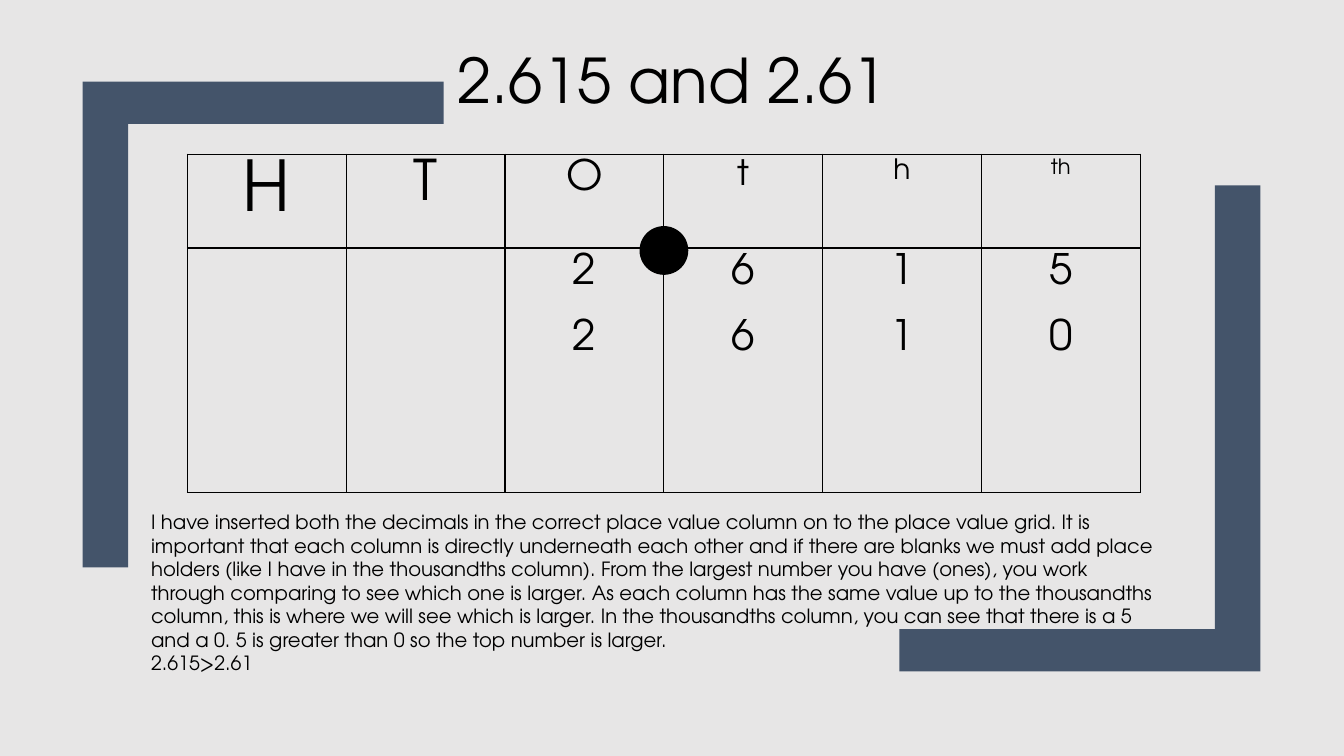
from dataclasses import dataclass

from lxml import etree
from pptx import Presentation
from pptx.dml.color import RGBColor
from pptx.enum import shapes, text
from pptx.oxml import ns
from pptx.util import Inches, Pt


@dataclass(frozen=True)
class Theme:
    font: str = "TeX Gyre Adventor"
    paper: RGBColor = RGBColor(0xE7, 0xE6, 0xE6)
    bracket: RGBColor = RGBColor(0x44, 0x54, 0x6A)
    ink: RGBColor = RGBColor(0, 0, 0)
    title: int = 44
    digit: int = 30
    body: int = 14
    digit_gap: float = 19.5
    rule: int = 1


@dataclass(frozen=True)
class Bracket:
    x: float
    y: float
    direction: int


@dataclass(frozen=True)
class PlaceValue:
    heading: str
    size: int
    digits: tuple[str, ...] = ()


THEME = Theme()
BRACKETS = (Bracket(12.5, 6.66, -1), Bracket(0.82, 0.81, 1))
BRACKET_OUTLINE = ((0, 0), (3.58, 0), (3.58, 0.42), (0.45, 0.42), (0.45, 4.82), (0, 4.82))
PLACES = (
    PlaceValue("H", 50),
    PlaceValue("T", 40),
    PlaceValue("O", 30, ("2", "2")),
    PlaceValue("t", 25, ("6", "6")),
    PlaceValue("h", 20, ("1", "1")),
    PlaceValue("th", 15, ("5", "0")),
)
GRID_LEFT, GRID_TOP, COLUMN_WIDTH = 1.86, 1.53, 1.575
ROW_HEIGHTS = (0.93, 2.43)
POINT_DIAMETER = 0.47
EXPLANATION = (
    "I have inserted both the decimals in the correct place value column on to the place value grid. "
    "It is important that each column is directly underneath each other and if there are blanks we must "
    "add place holders (like I have in the thousandths column). From the largest number you have (ones), "
    "you work through comparing to see which one is larger. As each column has the same value up to the "
    "thousandths column, this is where we will see which is larger. In the thousandths column, you can "
    "see that there is a 5 and a 0. 5 is greater than 0 so the top number is larger.",
    "2.615>2.61",
)


def write(frame, lines: tuple[str, ...], size: int, align, gap: float = 0) -> None:
    for index, line in enumerate(lines):
        paragraph = frame.add_paragraph() if index else frame.paragraphs[0]
        paragraph.alignment = align
        paragraph.space_before = Pt(gap if index else 0)
        run = paragraph.add_run()
        run.text = line
        run.font.name = THEME.font
        run.font.size = Pt(size)
        run.font.color.rgb = THEME.ink


def draw_bracket(slide, bracket: Bracket) -> None:
    corners = [
        (Inches(bracket.x + bracket.direction * dx), Inches(bracket.y + bracket.direction * dy))
        for dx, dy in BRACKET_OUTLINE
    ]
    builder = slide.shapes.build_freeform(*corners[0])
    builder.add_line_segments(corners[1:], close=True)
    outline = builder.convert_to_shape()
    outline.shadow.inherit = False
    outline.fill.solid()
    outline.fill.fore_color.rgb = THEME.bracket
    outline.line.fill.background()


def rule_cell(cell) -> None:
    cell.fill.background()
    properties = cell._tc.get_or_add_tcPr()
    for index, side in enumerate(("lnL", "lnR", "lnT", "lnB")):
        border = etree.Element(ns.qn(f"a:{side}"), w=str(Pt(THEME.rule)))
        paint = etree.SubElement(border, ns.qn("a:solidFill"))
        etree.SubElement(paint, ns.qn("a:srgbClr"), val=str(THEME.ink))
        properties.insert(index, border)


def draw_grid(slide) -> None:
    grid = slide.shapes.add_table(
        len(ROW_HEIGHTS), len(PLACES), Inches(GRID_LEFT), Inches(GRID_TOP),
        Inches(COLUMN_WIDTH * len(PLACES)), Inches(sum(ROW_HEIGHTS)),
    ).table
    grid.first_row = grid.horz_banding = False
    for row, height in zip(grid.rows, ROW_HEIGHTS):
        row.height = Inches(height)
    for column, place in enumerate(PLACES):
        grid.columns[column].width = Inches(COLUMN_WIDTH)
        heading, digits = grid.cell(0, column), grid.cell(1, column)
        rule_cell(heading)
        rule_cell(digits)
        write(heading.text_frame, (place.heading,), place.size, text.PP_ALIGN.CENTER)
        write(digits.text_frame, place.digits, THEME.digit, text.PP_ALIGN.CENTER, THEME.digit_gap)


def draw_decimal_point(slide) -> None:
    point = slide.shapes.add_shape(
        shapes.MSO_SHAPE.OVAL, Inches(6.35), Inches(2.25),
        Inches(POINT_DIAMETER), Inches(POINT_DIAMETER),
    )
    point.shadow.inherit = False
    point.fill.solid()
    point.fill.fore_color.rgb = THEME.ink
    point.line.color.rgb = THEME.ink
    point.line.width = Pt(THEME.rule)


def place_title(slide) -> None:
    title = slide.shapes.title
    title.left, title.top = Inches(1.67), Inches(0.36)
    title.width, title.height = Inches(10), Inches(0.84)
    title.text_frame.auto_size = text.MSO_AUTO_SIZE.NONE
    title.text_frame.vertical_anchor = text.MSO_ANCHOR.MIDDLE
    write(title.text_frame, ("2.615 and 2.61",), THEME.title, text.PP_ALIGN.CENTER)


def main() -> None:
    deck = Presentation()
    deck.slide_width, deck.slide_height = Inches(13.33), Inches(7.5)
    slide = deck.slides.add_slide(deck.slide_layouts[5])
    slide.background.fill.solid()
    slide.background.fill.fore_color.rgb = THEME.paper
    for bracket in BRACKETS:
        draw_bracket(slide, bracket)
    place_title(slide)
    draw_grid(slide)
    draw_decimal_point(slide)
    explanation = slide.shapes.add_textbox(Inches(1.4), Inches(5.01), Inches(10.27), Inches(1.75))
    explanation.text_frame.word_wrap = True
    write(explanation.text_frame, EXPLANATION, THEME.body, text.PP_ALIGN.LEFT)
    deck.save("out.pptx")


if __name__ == "__main__":
    main()
